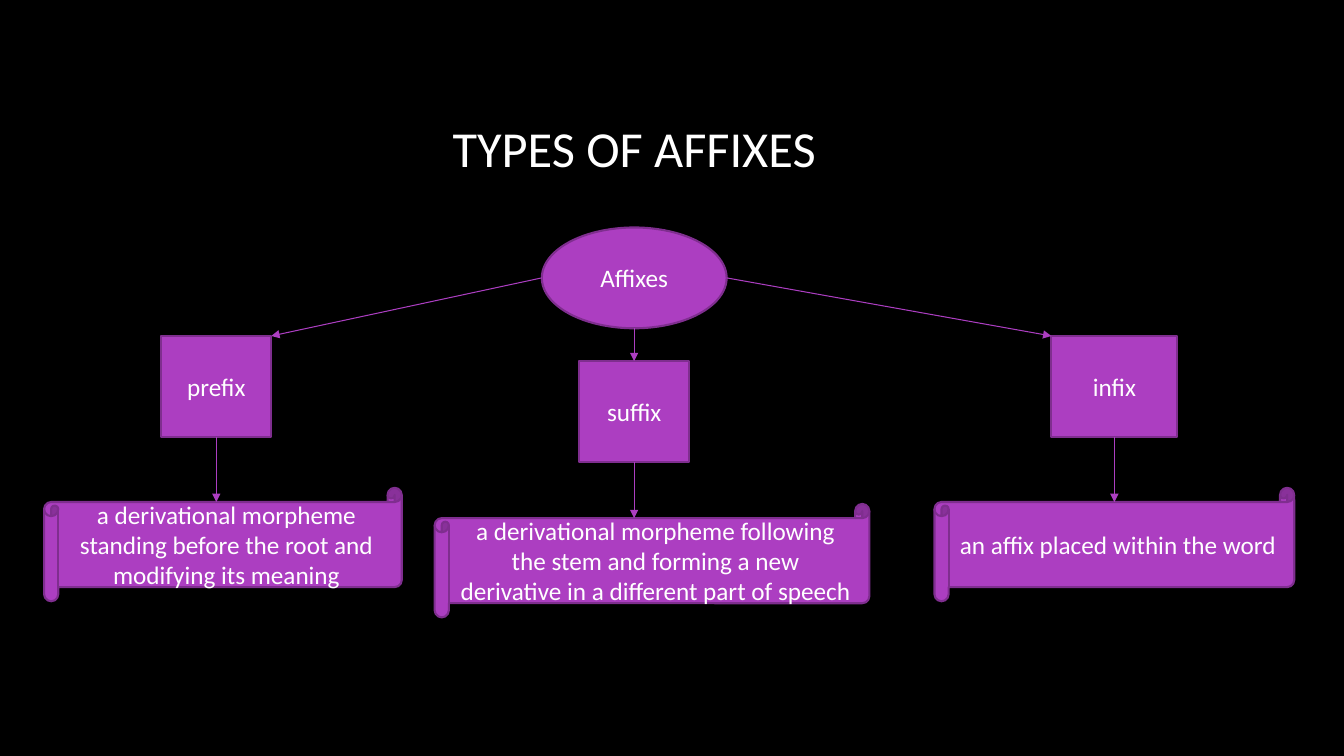
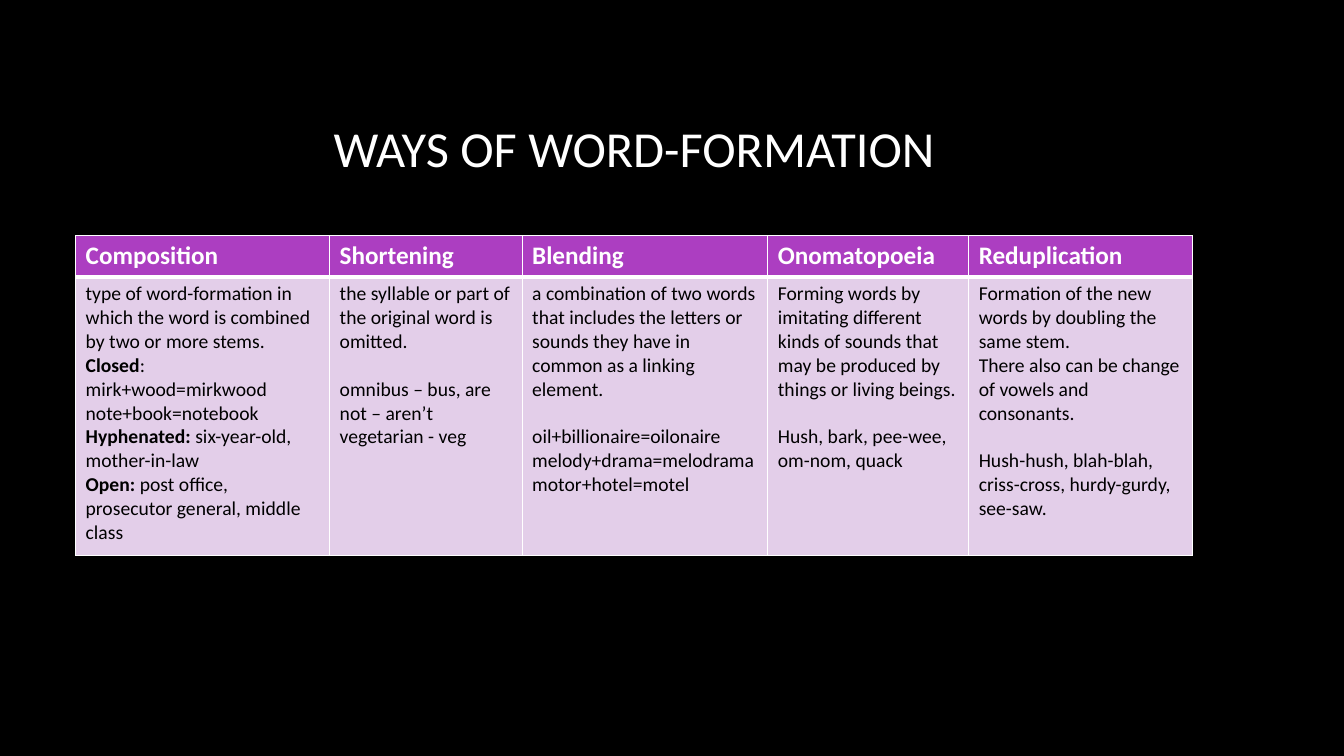
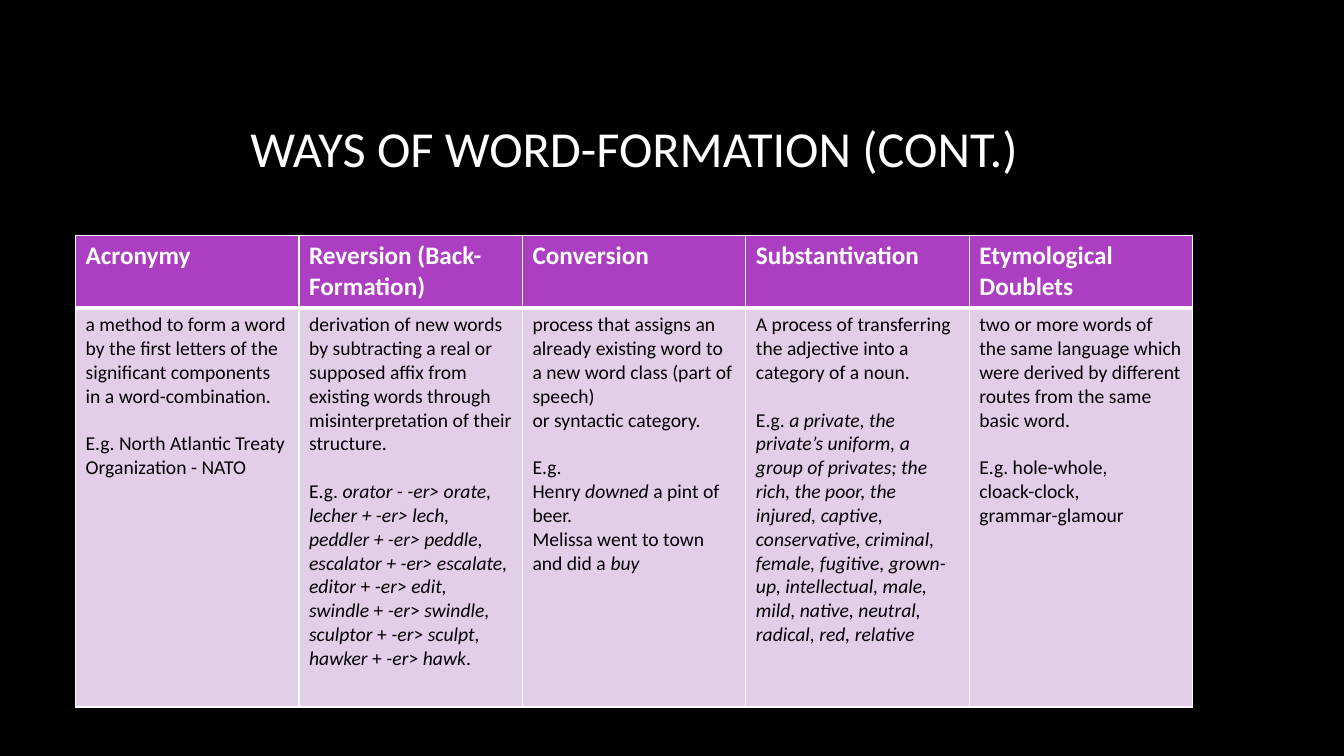
from dataclasses import dataclass

from lxml import etree
from pptx import Presentation
from pptx.dml.color import RGBColor
from pptx.enum import shapes, text
from pptx.oxml import ns
from pptx.util import Pt


@dataclass(frozen=True)
class Theme:
    font: str = "Calibri"
    background: str = "000000"
    light: str = "FFFFFF"
    dark: str = "000000"
    accent: str = "AC3EC1"
    outline: str = "7F2E8F"
    tint: str = "E3CEE9"
    title_size: float = 36
    label_size: float = 18
    cell_size: float = 14
    gap: float = 17
    outline_width: float = 1.5
    arrow_width: float = 0.75
    rule: float = 1
    header_rule: float = 3


@dataclass(frozen=True)
class Affix:
    name: str
    meaning: str
    center: float
    top: float
    width: float
    scroll: tuple


THEME = Theme()
LEFT, CONTENT_WIDTH = 54, 798
TABLE_TOP = 168.5

AFFIXES = [
    Affix("prefix", "a derivational morpheme standing before the root and modifying its meaning",
          154.5, 240, 78.5, (31.5, 348.5, 255.5, 81)),
    Affix("suffix", "a derivational morpheme following the stem and forming a new derivative "
          "in a different part of speech",
          453, 258, 78.5, (310.5, 360, 310.5, 81)),
    Affix("infix", "an affix placed within the word",
          796, 240, 90, (667.5, 348.5, 257, 81)),
]

# In cell text *bold*, _italic_, ~ is a no-break space and an empty line is a gap.
WAYS = {
    "Composition":
        "type of word-formation in which the word is combined by two or more stems.\n"
        "*Closed*: mirk+wood=mirkwood note+book=notebook\n"
        "*Hyphenated: *six-year-old, mother-in-law\n"
        "*Open:* post office, prosecutor general, middle class",
    "Shortening":
        "the syllable or part of the original word is omitted.\n\n"
        "omnibus – bus, are not – aren’t\n"
        "vegetarian - veg",
    "Blending":
        "a combination of two words that includes the letters or sounds they have "
        "in common as a linking element.\n\n"
        "oil+billionaire=oilonaire\n"
        "melody+drama=melodrama\n"
        "motor+hotel=motel",
    "Onomatopoeia":
        "Forming words by imitating different kinds of sounds that may be produced "
        "by things or living beings.\n\n"
        "Hush, bark, pee-wee, om-nom, quack",
    "Reduplication":
        "Formation of the new words by doubling the same stem.\n"
        "There also can be change of vowels and consonants.\n\n"
        "Hush-hush, blah-blah, criss-cross, hurdy-gurdy, see-saw.",
}

MORE_WAYS = {
    "Acronymy":
        "a method to form a word by the first letters of the significant components "
        "in a word-combination.\n\n"
        "E.g. North Atlantic Treaty Organization - NATO",
    "Reversion (Back-Formation)":
        "derivation of new words by subtracting a real or supposed affix from existing "
        "words through misinterpretation of their structure.\n\n"
        "E.g. _orator -~-er>~orate, lecher~+~-er>~lech, peddler~+~-er>~peddle, "
        "escalator~+~-er> escalate, editor_~+~_-er_>~_edit, swindle_~+~_-er_>~_swindle, "
        "sculptor_~+~_-er_>~_sculpt, hawker_~+~_-er_>~_hawk_.",
    "Conversion":
        "process that assigns an already existing word to a new word class~(part of "
        "speech) or~syntactic~category.\n\n"
        "E.g.\n"
        "Henry~_downed_~a pint of beer.\n"
        "Melissa went to town and did a~_buy_",
    "Substantivation":
        "A process of transferring the adjective into a category of a noun.\n\n"
        "E.g. _a private, the private’s uniform, a group of privates; the rich, the poor, "
        "the injured, captive, conservative,~criminal, female, fugitive, grown-up, "
        "intellectual, male, mild, native,~neutral, radical, red, relative_",
    "Etymological Doublets":
        "two or more words of the same language which were derived by different routes "
        "from the same basic word.\n\n"
        "E.g. hole-whole,\n"
        "cloack-clock,\n"
        "grammar-glamour",
}


def color(value):
    return RGBColor.from_string(value)


def add_span(para, words, size, fill, bold=False, italic=False):
    span = para.add_run()
    span.text = words
    font = span.font
    font.name, font.size = THEME.font, Pt(size)
    font.bold, font.italic = bold, italic
    font.color.rgb = color(fill)


def add_centered(frame, words, size):
    frame.word_wrap = True
    frame.vertical_anchor = text.MSO_ANCHOR.MIDDLE
    para = frame.paragraphs[0]
    para.alignment = text.PP_ALIGN.CENTER
    add_span(para, words, size, THEME.light)


def add_marked_text(frame, marked):
    """Fill a cell from text that carries the bold, italic and gap marks."""
    para = None
    for block_index, block in enumerate(marked.split("\n\n")):
        for line_index, line in enumerate(block.split("\n")):
            para = frame.add_paragraph() if para else frame.paragraphs[0]
            if block_index and not line_index:
                para.space_before = Pt(THEME.gap)
            line = line.replace("~", chr(160))
            for bold_index, part in enumerate(line.split("*")):
                for italic_index, words in enumerate(part.split("_")):
                    if words:
                        add_span(para, words, THEME.cell_size, THEME.dark,
                                 bold_index % 2 == 1, italic_index % 2 == 1)


def add_page(deck, title):
    page = deck.slides.add_slide(deck.slide_layouts.get_by_name("Title Only"))
    box = page.shapes.title
    box.left, box.top = Pt(LEFT), Pt(48)
    box.width, box.height = Pt(CONTENT_WIDTH), Pt(114.5)
    add_centered(box.text_frame, title, THEME.title_size)
    return page


def add_node(page, kind, words, *bounds):
    node = page.shapes.add_shape(kind, *map(Pt, bounds))
    node.shadow.inherit = False
    node.fill.solid()
    node.fill.fore_color.rgb = color(THEME.accent)
    node.line.color.rgb = color(THEME.outline)
    node.line.width = Pt(THEME.outline_width)
    add_centered(node.text_frame, words, THEME.label_size)
    return node


def add_arrow(page, start, end):
    arrow = page.shapes.add_connector(shapes.MSO_CONNECTOR.STRAIGHT, *start, *end)
    arrow.line.color.rgb = color(THEME.accent)
    arrow.line.width = Pt(THEME.arrow_width)
    etree.SubElement(arrow.line._get_or_add_ln(), ns.qn("a:tailEnd"), type="triangle")
    etree.SubElement(arrow._element.spPr, ns.qn("a:effectLst"))
    return arrow


def set_borders(cell, **widths):
    properties = cell._tc.get_or_add_tcPr()
    for side in "LRTB":
        width = widths.get(side, THEME.rule)
        line = etree.SubElement(properties, ns.qn(f"a:ln{side}"), w=str(Pt(width)))
        fill = etree.SubElement(line, ns.qn("a:solidFill"))
        etree.SubElement(fill, ns.qn("a:srgbClr"), val=THEME.light)


def fill_cell(cell, value):
    cell.fill.solid()
    cell.fill.fore_color.rgb = color(value)


def add_ways_table(page, ways, widths, heights):
    frame = page.shapes.add_table(2, len(ways), Pt(LEFT), Pt(TABLE_TOP),
                                  Pt(sum(widths)), Pt(sum(heights)))
    table = frame.table
    table.horz_banding = False
    for row, height in zip(table.rows, heights):
        row.height = Pt(height)
    for index, (name, meaning) in enumerate(ways.items()):
        table.columns[index].width = Pt(widths[index])
        header, body = table.cell(0, index), table.cell(1, index)
        set_borders(header, B=THEME.header_rule)
        set_borders(body, T=THEME.header_rule)
        fill_cell(header, THEME.accent)
        fill_cell(body, THEME.tint)
        add_span(header.text_frame.paragraphs[0], name, THEME.label_size, THEME.light, bold=True)
        add_marked_text(body.text_frame, meaning)


def add_affix_tree(page):
    kinds = shapes.MSO_SHAPE
    root = add_node(page, kinds.OVAL, "Affixes", 387, 162.5, 132, 72)
    root_right = root.left + root.width
    root_center = root.left + root.width // 2
    root_middle = root.top + root.height // 2
    for affix in AFFIXES:
        box = add_node(page, kinds.RECTANGLE, affix.name,
                       affix.center - affix.width / 2, affix.top, affix.width, 72)
        scroll = add_node(page, kinds.HORIZONTAL_SCROLL, affix.meaning, *affix.scroll)
        center = Pt(affix.center)
        if box.left + box.width < root.left:
            add_arrow(page, (root.left, root_middle), (box.left + box.width, box.top))
        elif box.left > root_right:
            add_arrow(page, (root_right, root_middle), (box.left, box.top))
        else:
            branch = add_arrow(page, (root_center, root.top + root.height), (center, box.top))
            branch.end_connect(box, 0)
        # The sheet of a scroll starts an eighth of its height below the top.
        stem = add_arrow(page, (center, box.top + box.height),
                         (center, scroll.top + scroll.height // 8))
        stem.begin_connect(box, 2)


def main():
    deck = Presentation()
    deck.slide_width, deck.slide_height = Pt(960), Pt(540)
    background = deck.slide_master.background.fill
    background.solid()
    background.fore_color.rgb = color(THEME.background)

    add_affix_tree(add_page(deck, "TYPES OF AFFIXES"))
    add_ways_table(add_page(deck, "WAYS OF WORD-FORMATION"), WAYS,
                   [181.5, 137.5, 175.5, 143.5, 160], [29.5, 199])
    add_ways_table(add_page(deck, "WAYS OF WORD-FORMATION (CONT.)"), MORE_WAYS,
                   [CONTENT_WIDTH / len(MORE_WAYS)] * len(MORE_WAYS), [51.5, 285])
    deck.save("out.pptx")


if __name__ == "__main__":
    main()
